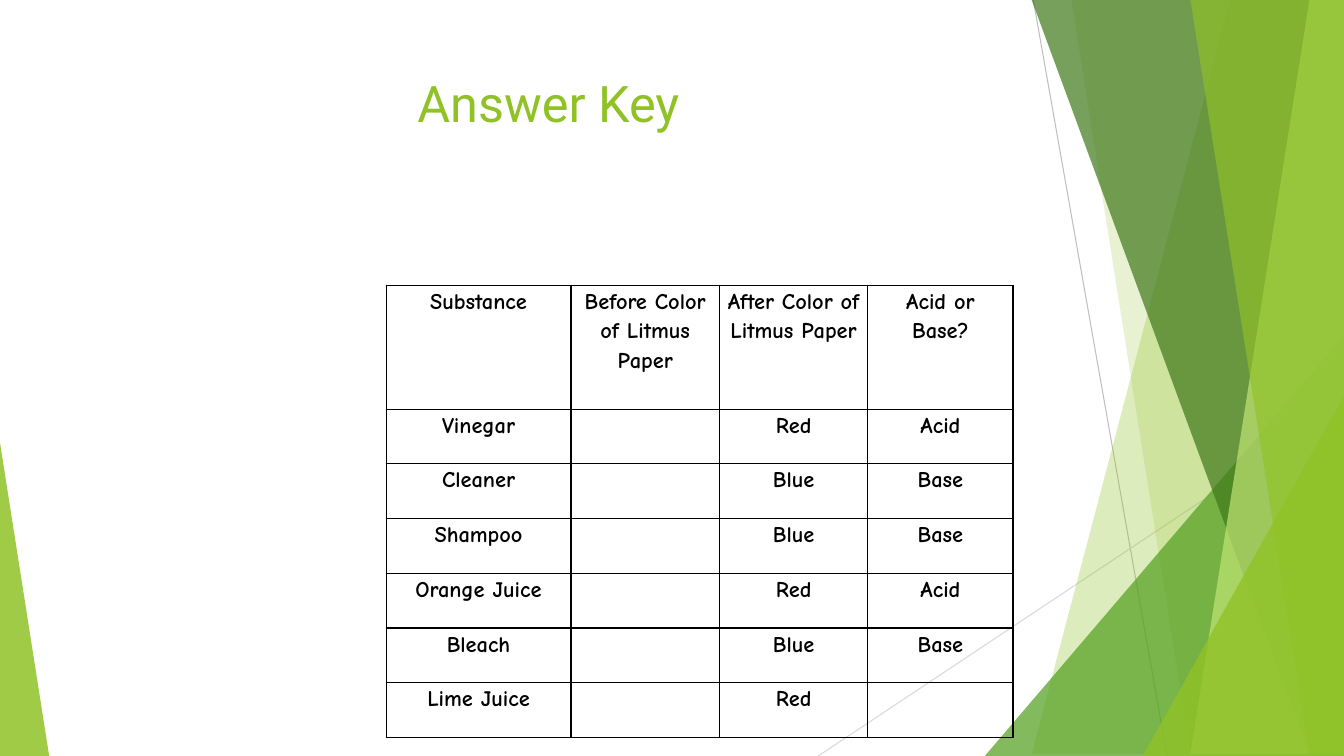
from lxml import etree
from pptx import Presentation
from pptx.dml.color import RGBColor
from pptx.enum.shapes import MSO_CONNECTOR, MSO_SHAPE
from pptx.enum.text import MSO_ANCHOR, PP_ALIGN
from pptx.oxml.ns import qn
from pptx.util import Cm, Pt

STRAIGHT = MSO_CONNECTOR.STRAIGHT
TRIANGLE = MSO_SHAPE.ISOSCELES_TRIANGLE
TOP = MSO_ANCHOR.TOP
CENTER = PP_ALIGN.CENTER

WIDTH, HEIGHT = 33.87, 19.05
GREEN = "90C226"
BLACK = "000000"

COLUMN_WIDTHS = [4.66, 3.74, 3.74, 3.66]
HEADER_HEIGHT, ROW_HEIGHT = 3.12, 1.38
ROWS = [
    ["Substance", "Before Color of Litmus Paper", "After Color of Litmus Paper", "Acid or Base?"],
    ["Vinegar", "", "Red", "Acid"],
    ["Cleaner", "", "Blue", "Base"],
    ["Shampoo", "", "Blue", "Base"],
    ["Orange Juice", "", "Red", "Acid"],
    ["Bleach", "", "Blue", "Base"],
    ["Lime Juice", "", "Red", ""],
]


def color(hex_text):
    return RGBColor.from_string(hex_text)


def paint(shape, hex_text, opacity):
    shape.shadow.inherit = False
    shape.line.fill.background()
    shape.fill.solid()
    shape.fill.fore_color.rgb = color(hex_text)
    color_element = shape.fill._xPr.find(qn("a:solidFill"))[0]
    etree.SubElement(color_element, qn("a:alpha"), val=str(opacity * 1000))


def add_ray(slide, start, end, hex_text):
    ray = slide.shapes.add_connector(STRAIGHT, *map(Cm, start + end))
    ray.line.color.rgb = color(hex_text)
    ray.line.width = Pt(0.75)
    etree.SubElement(ray._element.spPr, qn("a:effectLst"))


def add_facet(slide, top_x, bottom_x, right, bottom, hex_text, opacity):
    builder = slide.shapes.build_freeform(top_x, 0, scale=float(Cm(1)))
    builder.add_line_segments([(right, 0), (right, bottom), (bottom_x, bottom)], close=True)
    paint(builder.convert_to_shape(), hex_text, opacity)


def add_corner(slide, left, top, right, bottom, apex, hex_text, opacity):
    corner = slide.shapes.add_shape(
        TRIANGLE, Cm(left), Cm(top), Cm(right - left), Cm(bottom - top))
    corner.adjustments[0] = apex
    paint(corner, hex_text, opacity)


def add_decoration(slide, width, height):
    add_ray(slide, (26.04, 0), (29.41, height), "BFBFBF")
    add_ray(slide, (width, 10.24), (20.62, height), "D9D9D9")
    add_facet(slide, 31.19, 25.5, width, height, GREEN, 30)
    add_facet(slide, 26.67, 30.05, width, height, GREEN, 20)
    add_corner(slide, 24.82, 8.46, width, height, 1, "54A021", 72)
    add_facet(slide, 25.93, 32.79, width, height, "3F7819", 70)
    add_facet(slide, 33.1, 30.28, width, height, "C0E474", 70)
    add_facet(slide, 30.38, 33.48, width, height, GREEN, 65)
    add_corner(slide, 28.8, 9.98, width, height, 1, GREEN, 80)
    add_corner(slide, 0, 11.15, 1.24, height, 0, GREEN, 85)


def add_title(slide, left, top, width, height):
    box = slide.shapes.add_textbox(Cm(left), Cm(top), Cm(width), Cm(height))
    frame = box.text_frame
    frame.word_wrap = True
    frame.vertical_anchor = TOP
    paragraph = frame.paragraphs[0]
    paragraph.text = "Answer Key"
    paragraph.alignment = CENTER
    paragraph.font.name = "Roboto"
    paragraph.font.size = Pt(36)
    paragraph.font.color.rgb = color(GREEN)


def add_borders(cell, hex_text, width):
    properties = cell._tc.get_or_add_tcPr()
    for side in ("lnL", "lnR", "lnT", "lnB"):
        border = etree.SubElement(properties, qn("a:" + side), w=str(width))
        fill = etree.SubElement(border, qn("a:solidFill"))
        etree.SubElement(fill, qn("a:srgbClr"), val=hex_text)


def fill_cell(cell, text):
    add_borders(cell, BLACK, Pt(1))
    cell.fill.background()
    cell.margin_left = cell.margin_right = Cm(0.17)
    cell.margin_top = cell.margin_bottom = 0
    cell.vertical_anchor = TOP
    paragraph = cell.text_frame.paragraphs[0]
    paragraph.text = text
    paragraph.alignment = CENTER
    paragraph.line_spacing = 1.15
    paragraph.font.name = "Comic Neue"
    paragraph.font.size = Pt(16)
    paragraph.font.bold = True
    paragraph.font.color.rgb = color(BLACK)


def add_answer_table(slide, left, top):
    heights = [HEADER_HEIGHT] + [ROW_HEIGHT] * (len(ROWS) - 1)
    table = slide.shapes.add_table(
        len(ROWS), len(COLUMN_WIDTHS), Cm(left), Cm(top),
        Cm(sum(COLUMN_WIDTHS)), Cm(sum(heights))).table
    table.first_row = False
    table.horz_banding = False
    for column, width in zip(table.columns, COLUMN_WIDTHS):
        column.width = Cm(width)
    for row, height, texts in zip(table.rows, heights, ROWS):
        row.height = Cm(height)
        for cell, text in zip(row.cells, texts):
            fill_cell(cell, text)


def main():
    presentation = Presentation()
    presentation.slide_width = Cm(WIDTH)
    presentation.slide_height = Cm(HEIGHT)
    slide = presentation.slides.add_slide(presentation.slide_layouts[6])
    add_decoration(slide, WIDTH, HEIGHT)
    add_title(slide, 1.88, 1.7, 23.88, 3.66)
    add_answer_table(slide, 9.73, 7.19)
    presentation.save("out.pptx")


if __name__ == "__main__":
    main()
